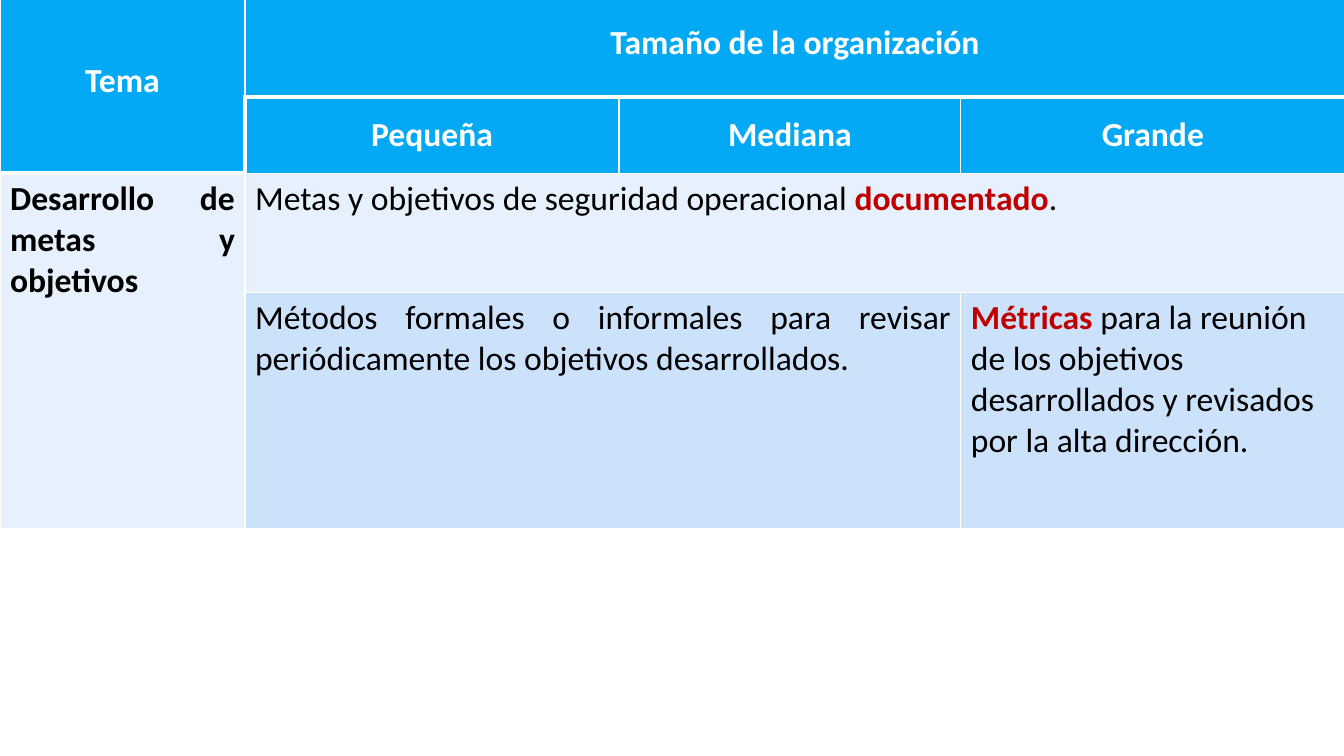
from lxml import etree
from pptx import Presentation
from pptx.dml.color import RGBColor
from pptx.enum.text import MSO_ANCHOR, PP_ALIGN
from pptx.oxml.ns import qn
from pptx.util import Inches, Pt

CENTER, LEFT, JUSTIFY = PP_ALIGN.CENTER, PP_ALIGN.LEFT, PP_ALIGN.JUSTIFY
MIDDLE, TOP = MSO_ANCHOR.MIDDLE, MSO_ANCHOR.TOP
WHITE, BLACK, RED = "FFFFFF", "000000", "C00000"
HEADER, LIGHT, BAND = "03A9F5", "E7F1FD", "CCE2FB"


def rgb(value):
    return RGBColor.from_string(value)


def add_run(p, text, color=BLACK, bold=False, size=24, font="Calibri"):
    r = p.add_run()
    r.text = text
    r.font.name = font
    r.font.size = Pt(size)
    r.font.bold = bold
    r.font.color.rgb = rgb(color)


class TableSlide:
    def __init__(self, prs):
        self.s = prs.slides.add_slide(prs.slide_layouts[6])
        self.border_color = WHITE

    def table(self, left, top, widths, heights):
        gf = self.s.shapes.add_table(
            len(heights), len(widths), Inches(left), Inches(top),
            Inches(sum(widths)), Inches(sum(heights)))
        tbl = gf.table
        for column, width in zip(tbl.columns, widths):
            column.width = Inches(width)
        for row, height in zip(tbl.rows, heights):
            row.height = Inches(height)
        return tbl

    def borders(self, cell, widths):
        tc_pr = cell._tc.get_or_add_tcPr()
        for i, (side, width) in enumerate(zip("LRTB", widths)):
            ln = etree.Element(qn(f"a:ln{side}"), w=str(Pt(width)))
            fill = etree.SubElement(ln, qn("a:solidFill"))
            etree.SubElement(fill, qn("a:srgbClr"), val=self.border_color)
            tc_pr.insert(i, ln)

    def cell(self, tbl, row, col, runs, fill, rows=1, cols=1,
             align=LEFT, anchor=TOP, borders=(1, 1, 1, 1)):
        cell = tbl.cell(row, col)
        if rows * cols > 1:
            cell.merge(tbl.cell(row + rows - 1, col + cols - 1))
        for i in range(row, row + rows):
            for j in range(col, col + cols):
                part = tbl.cell(i, j)
                part.fill.solid()
                part.fill.fore_color.rgb = rgb(fill)
                self.borders(part, borders)
        cell.vertical_anchor = anchor
        p = cell.text_frame.paragraphs[0]
        p.alignment = align
        for text, style in runs:
            add_run(p, text, **style)

    def header(self, tbl, row, col, text, **layout):
        runs = [(text, {"color": WHITE, "bold": True})]
        self.cell(tbl, row, col, runs, HEADER, align=CENTER, anchor=MIDDLE, **layout)


def main():
    prs = Presentation()
    prs.slide_width, prs.slide_height = Inches(13.33), Inches(7.5)
    slide = TableSlide(prs)
    tbl = slide.table(0, -0.11, [2.43, 3.71, 3.39, 3.81], [1.07, 0.76, 1.18, 2.34])
    strong = {"bold": True}
    accent = {"color": RED, "bold": True}

    slide.header(tbl, 0, 0, "Tema", rows=2, borders=(1, 1, 1, 3))
    slide.header(tbl, 0, 1, "Tamaño de la organización", cols=3, borders=(1, 1, 1, 3))
    for col, size_name in enumerate(["Pequeña", "Mediana", "Grande"], 1):
        slide.header(tbl, 1, col, size_name, borders=(3 if col == 1 else 1, 1, 3, 1))

    slide.cell(tbl, 2, 0, [("Desarrollo de metas y objetivos", strong)], LIGHT,
               rows=2, align=JUSTIFY, borders=(1, 1, 3, 1))
    slide.cell(tbl, 2, 1, [("Metas y objetivos de seguridad operacional ", {}),
                           ("documentado", accent), (".", {})], LIGHT, cols=3)
    slide.cell(tbl, 3, 1, [("Métodos formales o informales para revisar "
                            "periódicamente los objetivos desarrollados.", {})],
               BAND, cols=2, align=JUSTIFY)
    slide.cell(tbl, 3, 3, [("Métricas", accent),
                           (" para la reunión de los objetivos desarrollados y "
                            "revisados por la alta dirección.", {})], BAND)
    prs.save("out.pptx")


if __name__ == "__main__":
    main()
